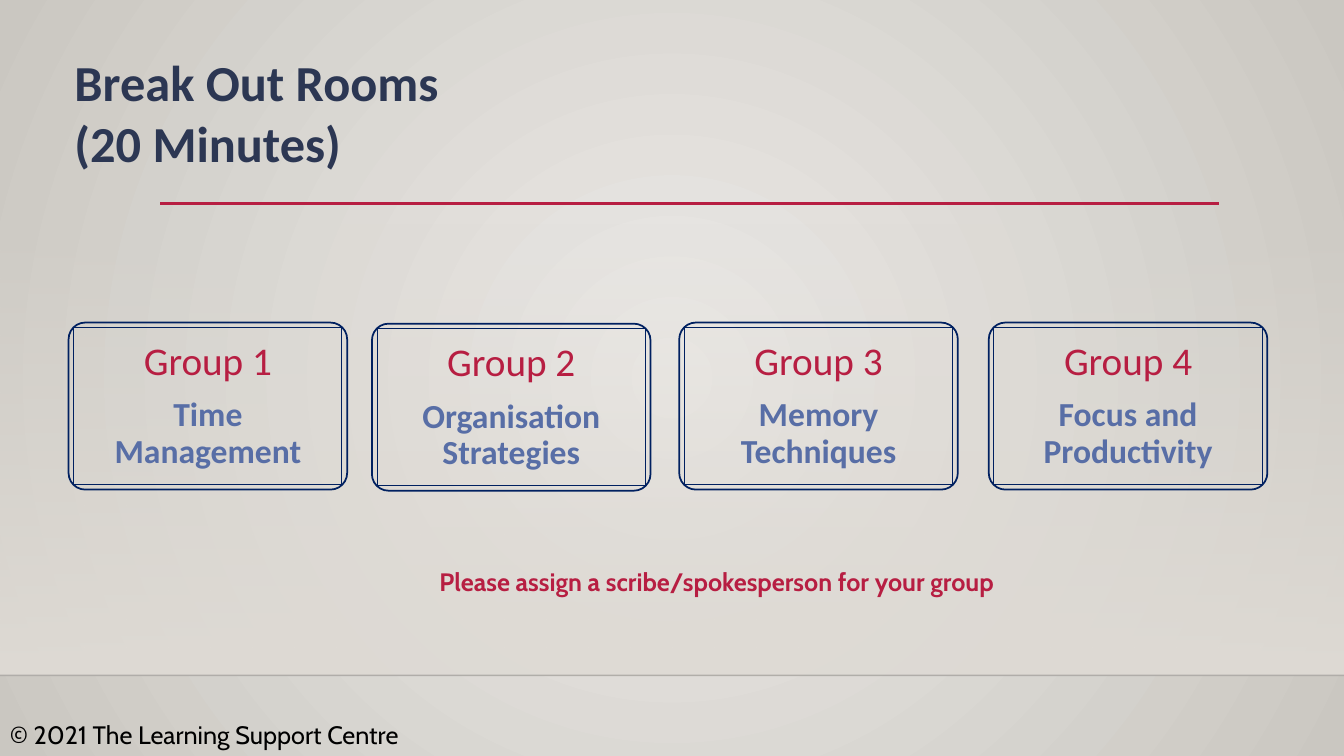
from lxml import etree
from pptx import Presentation
from pptx.dml.color import RGBColor
from pptx.enum import shapes, text
from pptx.oxml.ns import qn
from pptx.util import Pt

NAVY = RGBColor(0x00, 0x20, 0x60)
TITLE_BLUE = RGBColor(0x2C, 0x37, 0x53)
TOPIC_BLUE = RGBColor(0x58, 0x6E, 0xA6)
RED = RGBColor(0xB7, 0x1E, 0x42)
BLACK = RGBColor(0x00, 0x00, 0x00)
EDGE = RGBColor(0x00, 0x00, 0x01)
LIGHT = RGBColor(0xEC, 0xEA, 0xE7)
DARK = RGBColor(0xCA, 0xC7, 0xC1)
SAND = RGBColor(0xDF, 0xDB, 0xD5)

TITLE = "Break Out Rooms\v(20 Minutes)"
TITLE_BOX = (46, 33, 741, 94.5)
PANEL_BOX = (0, 159, 960, 323.4)

GROUPS = [  # heading, topic, left, top
    ("Group 1", "Time Management", 49, 230.4),
    ("Group 2", "Organisation Strategies", 265.7, 231.2),
    ("Group 3", "Memory Techniques", 485.2, 230.4),
    ("Group 4", "Focus and Productivity", 706.3, 230.4),
]
CARD_WIDTH, CARD_HEIGHT, CARD_GAP = 199, 119.3, 3.7
CARD_INSET = 18.7

RULES = [  # left, right, height on page, colour, weight, opacity in percent
    (0, 960, 482.4, EDGE, 1, 20),
    (114.5, 871, 145.2, RED, 2.5, 100),
]

NOTES = [  # wording, box, alignment, format
    ("© 2021 The Learning Support Centre", (0, 510.5, 336, 29),
     text.PP_ALIGN.LEFT, dict(size=Pt(18), name="Cabin", bold=False, color=BLACK)),
    ("Please assign a scribe/spokesperson for your group", (134, 401.2, 756, 29),
     text.PP_ALIGN.CENTER, dict(size=Pt(18), name="Cabin", bold=True, color=RED)),
]
TITLE_FORMAT = dict(size=Pt(36), name="Calibri", bold=True, color=TITLE_BLUE)
HEADING_FORMAT = dict(size=Pt(28), name="Calibri", bold=False, color=RED)
TOPIC_FORMAT = dict(size=Pt(24), name="Calibri", bold=True, color=TOPIC_BLUE)


def points(*lengths):
    return [Pt(length) for length in lengths]


def write(para, wording, alignment, style):
    para.text = wording
    para.alignment = alignment
    for name, value in style.items():
        if name == "color":
            para.font.color.rgb = value
            for span in para.runs:
                span.font.color.rgb = value
        else:
            for font in [para.font] + [span.font for span in para.runs]:
                setattr(font, name, value)


def set_opacity(root, percent):
    for color in root.iter(qn("a:srgbClr")):
        etree.SubElement(color, qn("a:alpha")).set("val", str(percent * 1000))


def fill_gradient(fill, colors):
    fill.gradient()
    for stop, color in zip(fill.gradient_stops, colors):
        stop.color.rgb = color


def add_background(page):
    """Radial gradient spreading from the middle of the page."""
    fill_gradient(page.background.fill, (LIGHT, DARK))
    gradient = next(page._element.iter(qn("a:gradFill")))
    gradient.remove(gradient.find(qn("a:lin")))
    circle = etree.SubElement(gradient, qn("a:path"), {"path": "circle"})
    etree.SubElement(circle, qn("a:fillToRect"), {side: "50000" for side in "ltrb"})


def add_panel(page):
    """Band that fades in from top to bottom."""
    panel = page.shapes.add_shape(shapes.MSO_SHAPE.RECTANGLE, *points(*PANEL_BOX))
    panel.shadow.inherit = False
    panel.line.fill.background()
    fill_gradient(panel.fill, (SAND, SAND))
    panel.fill.gradient_angle = 270
    stops = panel._element.spPr.iter(qn("a:gs"))
    set_opacity(next(stops), 0)


def add_rule(page, left, right, y, color, weight, opacity):
    rule = page.shapes.add_connector(
        shapes.MSO_CONNECTOR.STRAIGHT, *points(left, y, right, y))
    rule.line.color.rgb = color
    rule.line.width = Pt(weight)
    if opacity < 100:
        set_opacity(rule._element.spPr, opacity)
    etree.SubElement(rule._element.spPr, qn("a:effectLst"))


def add_outline(group, preset, box, weight):
    outline = group.shapes.add_shape(preset, *points(*box))
    outline.shadow.inherit = False
    outline.fill.background()
    outline.line.color.rgb = NAVY
    outline.line.width = Pt(weight)
    return outline


def add_card(page, heading, topic, left, top):
    card = page.shapes.add_group_shape()
    frame = add_outline(card, shapes.MSO_SHAPE.ROUNDED_RECTANGLE,
                        (left, top, CARD_WIDTH, CARD_HEIGHT), 1.25)
    frame.adjustments[0] = 0.1
    label = add_outline(card, shapes.MSO_SHAPE.RECTANGLE,
                        (left + CARD_GAP, top + CARD_GAP,
                         CARD_WIDTH - 2 * CARD_GAP, CARD_HEIGHT - 2 * CARD_GAP), 0.75)
    body = label.text_frame
    body.word_wrap = True
    body.vertical_anchor = text.MSO_ANCHOR.MIDDLE
    for side in ("left", "top", "right", "bottom"):
        setattr(body, f"margin_{side}", Pt(CARD_INSET))
    lines = [(body.paragraphs[0], heading, HEADING_FORMAT),
             (body.add_paragraph(), topic, TOPIC_FORMAT)]
    for para, wording, style in lines:
        write(para, wording, text.PP_ALIGN.CENTER, style)
        para.line_spacing = 0.9
    body.paragraphs[0].space_after = Pt(9.8)


def add_note(page, wording, box, alignment, style):
    note = page.shapes.add_textbox(*points(*box)).text_frame
    note.word_wrap = True
    note.auto_size = text.MSO_AUTO_SIZE.SHAPE_TO_FIT_TEXT
    write(note.paragraphs[0], wording, alignment, style)


def add_title(page):
    title = page.shapes.title
    title.left, title.top, title.width, title.height = points(*TITLE_BOX)
    title.text_frame.word_wrap = True
    title.text_frame.auto_size = text.MSO_AUTO_SIZE.SHAPE_TO_FIT_TEXT
    title.text_frame.vertical_anchor = text.MSO_ANCHOR.TOP
    write(title.text_frame.paragraphs[0], TITLE, text.PP_ALIGN.LEFT, TITLE_FORMAT)


def main():
    deck = Presentation()
    deck.slide_width, deck.slide_height = points(960, 540)
    page = deck.slides.add_slide(deck.slide_layouts.get_by_name("Title Only"))
    add_background(page)
    add_panel(page)
    for rule in RULES:
        add_rule(page, *rule)
    add_title(page)
    for group in GROUPS:
        add_card(page, *group)
    for note in NOTES:
        add_note(page, *note)
    deck.save("out.pptx")


if __name__ == "__main__":
    main()
